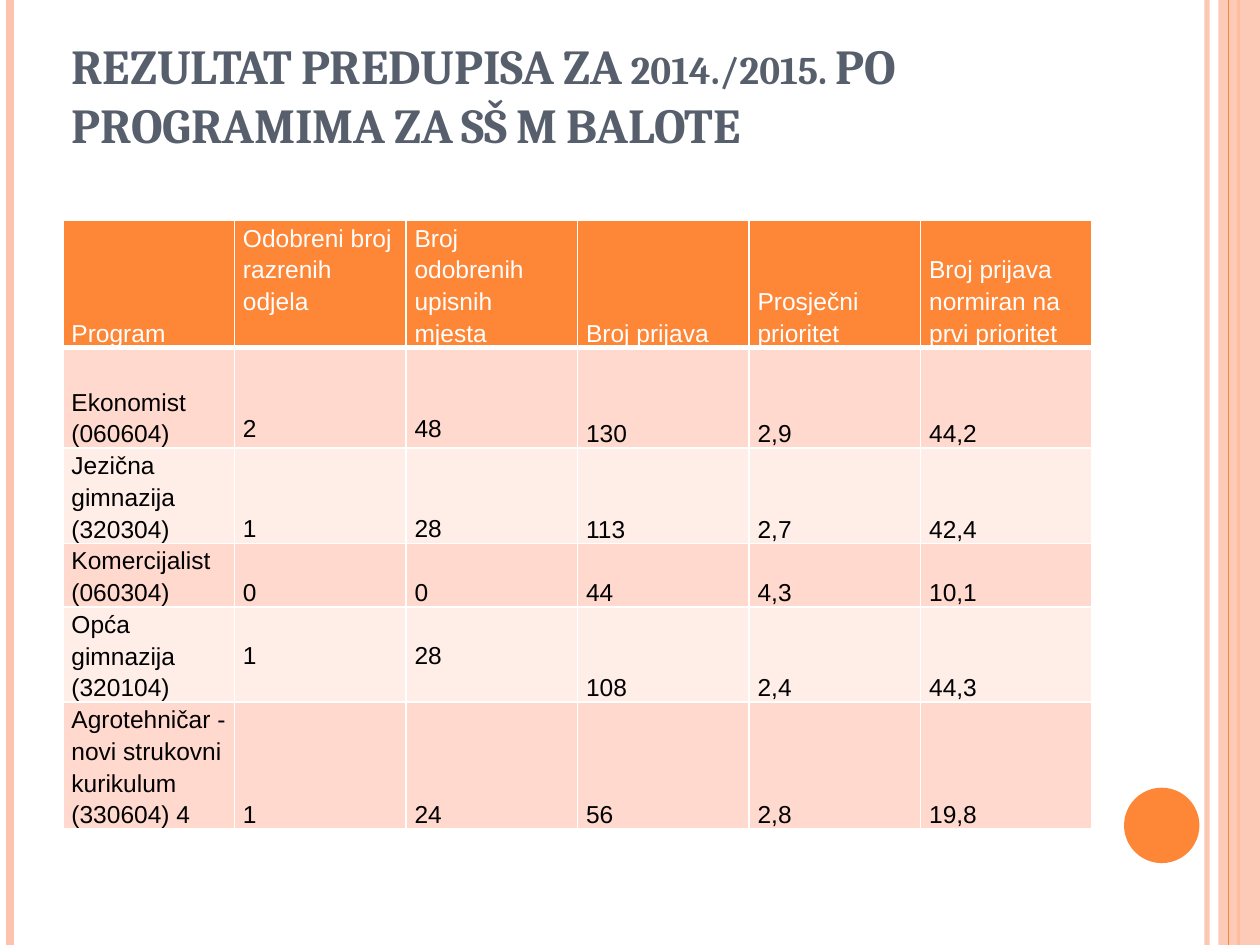
from lxml import etree
from pptx import Presentation
from pptx import util as u
from pptx.dml.color import RGBColor
from pptx.enum import shapes, text
from pptx.oxml import ns

Cm, Pt = u.Cm, u.Pt
COLORS = {
    "orange": "FE8637", "peach": "FEC3AE", "title": "575F6D",
    "white": "FFFFFF", "black": "000000",
    "band_dark": "FFD9CE", "band_light": "FFEDE8",
}
LINE_STEP = 0.64  # height in cm of one 14 pt line at 1.15 spacing

HEADERS = ["Program", "Odobreni broj razrenih odjela",
           "Broj odobrenih upisnih mjesta", "Broj prijava",
           "Prosječni prioritet", "Broj prijava normiran na prvi prioritet"]
# row values, row height in cm, lines that the class and place counts drop by
PROGRAMS = [
    (["Ekonomist (060604)", "2", "48", "130", "2,9", "44,2"], 2.03, 2),
    (["Jezična gimnazija (320304)", "1", "28", "113", "2,7", "42,4"], 1.92, 2),
    (["Komercijalist (060304)", "0", "0", "44", "4,3", "10,1"], 1.28, 1),
    (["Opća gimnazija (320104)", "1", "28", "108", "2,4", "44,3"], 1.92, 1),
    (["Agrotehničar - novi strukovni kurikulum (330604) 4",
      "1", "24", "56", "2,8", "19,8"], 2.56, 3),
]


def rgb(name):
    return RGBColor.from_string(COLORS[name])


def set_alpha(sp, percent):
    color = next(sp._element.spPr.iter(ns.qn("a:srgbClr")))
    etree.SubElement(color, ns.qn("a:alpha"), val=str(percent * 1000))


def add_stripe(s, x, height, color, width, alpha=None):
    sp = s.shapes.add_connector(shapes.MSO_CONNECTOR.STRAIGHT,
                                Cm(x), 0, Cm(x), height)
    sp.line.color.rgb = rgb(color)
    sp.line.width = Pt(width)
    if alpha:
        set_alpha(sp, alpha)
    etree.SubElement(sp._element.spPr, ns.qn("a:effectLst"))


def add_solid(s, kind, left, top, width, height, color):
    sp = s.shapes.add_shape(kind, left, top, width, height)
    sp.shadow.inherit = False
    sp.fill.solid()
    sp.fill.fore_color.rgb = rgb(color)
    sp.line.fill.background()
    return sp


def add_decoration(s, width, height):
    add_stripe(s, 24.33, height, "peach", 3, 93)
    add_stripe(s, 0.2, height, "peach", 4.5)
    add_stripe(s, 24.97, height, "orange", 1.5)
    band = add_solid(s, shapes.MSO_SHAPE.RECTANGLE, width - Cm(0.84), 0,
                     Cm(0.84), height, "peach")
    set_alpha(band, 87)
    add_stripe(s, 24.77, height, "orange", 0.75)
    add_solid(s, shapes.MSO_SHAPE.OVAL, Cm(22.66), Cm(15.88),
              Cm(1.52), Cm(1.52), "orange")


def fill_title(s, left, top, width, height):
    sp = s.shapes.title
    sp.left, sp.top, sp.width, sp.height = left, top, width, height
    tf = sp.text_frame
    tf.word_wrap = True
    tf.auto_size = text.MSO_AUTO_SIZE.NONE
    tf.vertical_anchor = text.MSO_ANCHOR.BOTTOM
    tf.margin_bottom = Cm(1.28)
    p = tf.paragraphs[0]
    p.alignment = text.PP_ALIGN.LEFT
    r = p.add_run()
    r.text = "REZULTAT PREDUPISA ZA 2014./2015. PO PROGRAMIMA ZA SŠ M BALOTE"
    r.font.name, r.font.size, r.font.bold = "Cambria", Pt(27.9), True
    r.font.color.rgb = rgb("title")
    r._r.get_or_add_rPr().set("cap", "small")


def set_borders(cell, top, bottom):
    widths = {"L": 1, "R": 1, "T": top, "B": bottom}
    for side, width in widths.items():
        ln = etree.SubElement(cell._tc.get_or_add_tcPr(), ns.qn(f"a:ln{side}"),
                              w=str(Pt(width)))
        fill = etree.SubElement(ln, ns.qn("a:solidFill"))
        etree.SubElement(fill, ns.qn("a:srgbClr"), val=COLORS["white"])


def fill_cell(cell, value, fill, color, at_top, drop):
    cell.margin_left = cell.margin_right = Cm(0.17)
    cell.margin_top = Cm(drop * LINE_STEP if at_top else 0)
    cell.margin_bottom = 0
    cell.vertical_anchor = (text.MSO_ANCHOR.TOP if at_top
                            else text.MSO_ANCHOR.BOTTOM)
    cell.fill.solid()
    cell.fill.fore_color.rgb = rgb(fill)
    p = cell.text_frame.paragraphs[0]
    p.line_spacing = 1.15
    r = p.add_run()
    r.text = value
    r.font.name, r.font.size, r.font.bold = "Arial", Pt(14), False
    r.font.color.rgb = rgb(color)


def add_program_table(s, left, top, width):
    rows = [(HEADERS, 2.54, 0)] + PROGRAMS
    height = Cm(sum(row[1] for row in rows))
    table = s.shapes.add_table(len(rows), len(HEADERS),
                               left, top, width, height).table
    for col in table.columns:
        col.width = width // len(HEADERS)
    for i, (values, row_height, drop) in enumerate(rows):
        table.rows[i].height = Cm(row_height)
        band = "band_dark" if i % 2 else "band_light"
        fill, color = (band, "black") if i else ("orange", "white")
        for j, value in enumerate(values):
            cell = table.cell(i, j)
            set_borders(cell, 3 if i == 1 else 1, 3 if i == 0 else 1)
            fill_cell(cell, value, fill, color, j in (1, 2), drop)


def main():
    prs = Presentation()
    prs.slide_width, prs.slide_height = Cm(25.4), Cm(19.05)
    s = prs.slides.add_slide(prs.slide_layouts[5])
    add_decoration(s, prs.slide_width, prs.slide_height)
    fill_title(s, Cm(1.19), Cm(1.19), Cm(22.86), Cm(3.18))
    add_program_table(s, Cm(1.27), Cm(4.45), Cm(20.75))
    prs.save("out.pptx")


if __name__ == "__main__":
    main()
